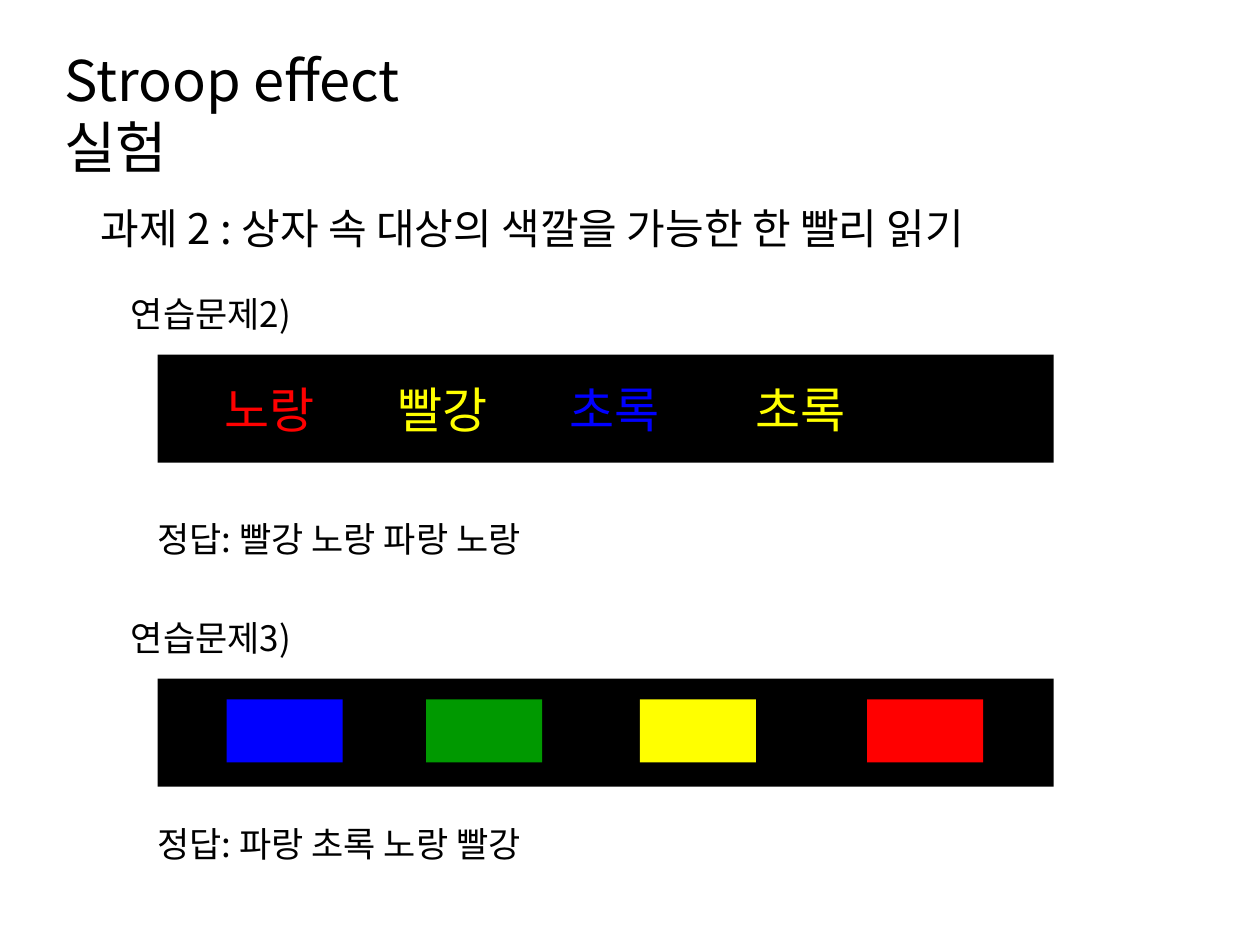
"""Build the Stroop effect experiment slide."""
from lxml import etree
from pptx import Presentation
from pptx.dml.color import RGBColor
from pptx.enum.shapes import MSO_SHAPE
from pptx.enum.text import MSO_ANCHOR, PP_ALIGN
from pptx.oxml.ns import qn
from pptx.util import Cm, Pt

RECT = MSO_SHAPE.RECTANGLE
LEFT = PP_ALIGN.LEFT
TOP, MIDDLE = MSO_ANCHOR.TOP, MSO_ANCHOR.MIDDLE
FONT = "Noto Sans CJK KR"
COLORS = {"black": "000000", "red": "FF0000", "yellow": "FFFF00",
          "blue": "0000FF", "green": "009900"}


def add_run(p, text, size=20, color="black"):
    """Add a run in the slide font to a paragraph."""
    r = p.add_run()
    r.text = text
    r.font.name = FONT
    r.font.size = Pt(size)
    r.font.color.rgb = RGBColor.from_string(COLORS[color])
    etree.SubElement(r.font._element, qn("a:ea"), typeface=FONT)


class SlideBuilder:
    """Hold the style and the current slide."""

    def __init__(self, prs):
        """Add a title and content slide."""
        self.s = prs.slides.add_slide(prs.slide_layouts[1])

    def place(self, sp, x, y, w, h):
        """Move and size a shape in centimetres."""
        sp.left, sp.top, sp.width, sp.height = Cm(x), Cm(y), Cm(w), Cm(h)

    def fill_text(self, sp, text, wrap=False, **style):
        """Put one left-aligned paragraph at the top of a shape."""
        tf = sp.text_frame
        tf.word_wrap = wrap
        tf.vertical_anchor = TOP
        p = tf.paragraphs[0]
        p.alignment = LEFT
        p.space_before = Pt(0)
        add_run(p, text, **style)
        return p

    def title(self, text, x, y, w, h):
        """Fill the title placeholder."""
        sp = self.s.shapes.title
        self.place(sp, x, y, w, h)
        self.fill_text(sp, text, wrap=True, size=32)

    def body(self, text, x, y, w, h):
        """Fill the body placeholder without a bullet."""
        sp = self.s.placeholders[1]
        self.place(sp, x, y, w, h)
        pPr = self.fill_text(sp, text, size=24)._p.get_or_add_pPr()
        pPr.set("marL", "0")
        pPr.set("indent", "0")
        etree.SubElement(pPr, qn("a:buNone"))

    def label(self, text, x, y, w, h=1.12):
        """Add a text box."""
        sp = self.s.shapes.add_textbox(Cm(x), Cm(y), Cm(w), Cm(h))
        self.fill_text(sp, text)

    def box(self, color, x, y, w, h):
        """Add a plain filled rectangle."""
        sp = self.s.shapes.add_shape(RECT, Cm(x), Cm(y), Cm(w), Cm(h))
        sp.shadow.inherit = False
        sp.fill.solid()
        sp.fill.fore_color.rgb = RGBColor.from_string(COLORS[color])
        sp.line.fill.background()
        return sp

    def words(self, sp, words):
        """Set coloured words at tab stops inside a shape."""
        tf = sp.text_frame
        tf.vertical_anchor = MIDDLE
        p = tf.paragraphs[0]
        p.alignment = LEFT
        tabs = etree.SubElement(p._p.get_or_add_pPr(), qn("a:tabLst"))
        for text, color, pos in words:
            etree.SubElement(tabs, qn("a:tab"), pos=str(Cm(pos)), algn="l")
            add_run(p, "\t" + text, size=28, color=color)


def main():
    """Build and save the slide."""
    prs = Presentation()
    prs.slide_width, prs.slide_height = Cm(25.4), Cm(19.05)
    b = SlideBuilder(prs)
    b.title("Stroop effect 실험", 1.04, 0.79, 8.4, 3)
    b.body("과제 2 : 상자 속 대상의 색깔을 가능한 한 빨리 읽기", 1.78, 3.96, 20.45, 1.27)

    exercises = [("연습문제2)", 5.77, "정답: 빨강 노랑 파랑 노랑", 10.31),
                 ("연습문제3)", 12.3, "정답: 파랑 초록 노랑 빨강", 16.46)]
    bars = []
    for heading, y, answer, answer_y in exercises:
        b.label(heading, 2.39, y, 4.22)
        bars.append(b.box("black", 3.18, y + 1.38, 18.06, 2.18))
        b.label(answer, 2.92, answer_y, 8.79)

    b.words(bars[0], [("노랑", "red", 1.1), ("빨강", "yellow", 4.58),
                      ("초록", "blue", 8.06), ("초록", "yellow", 11.8)])
    for color, x in [("blue", 4.57), ("green", 8.59),
                     ("yellow", 12.9), ("red", 17.48)]:
        b.box(color, x, 14.1, 2.34, 1.27)

    prs.save("out.pptx")


if __name__ == "__main__":
    main()
